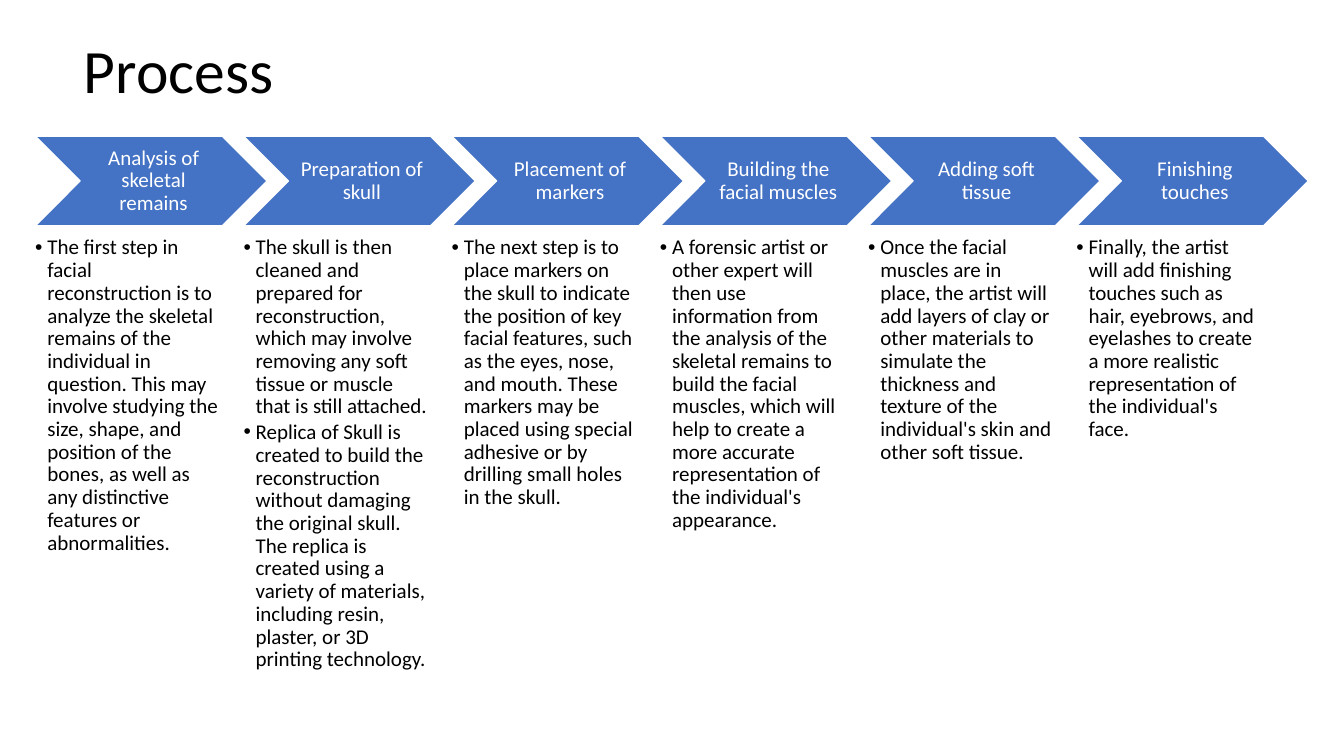
from lxml import etree
from pptx import Presentation
from pptx.dml.color import RGBColor
from pptx.enum import shapes, text
from pptx.oxml.ns import qn
from pptx.util import Pt

BLACK = RGBColor(0x00, 0x00, 0x00)
WHITE = RGBColor(0xFF, 0xFF, 0xFF)
BLUE = RGBColor(0x44, 0x72, 0xC4)

FIRST_LEFT, STEP_PITCH = 25.2, 148.75
CHEVRON_TOP, CHEVRON_WIDTH, CHEVRON_HEIGHT = 97.2, 165.6, 64.1
DETAIL_TOP, DETAIL_WIDTH, DETAIL_HEIGHT = 169.2, 132.5, 321.8
BULLET_INDENT = 8.64

STEPS = [
    ("Analysis of skeletal remains", [
        "The first step in facial reconstruction is to analyze the skeletal remains "
        "of the individual in question. This may involve studying the size, shape, "
        "and position of the bones, as well as any distinctive features or "
        "abnormalities."]),
    ("Preparation of skull", [
        "The skull is then cleaned and prepared for reconstruction, which may involve "
        "removing any soft tissue or muscle that is still attached.",
        "Replica of Skull is created to build the reconstruction without damaging the "
        "original skull. The replica is created using a variety of materials, "
        "including resin, plaster, or 3D printing technology."]),
    ("Placement of markers", [
        "The next step is to place markers on the skull to indicate the position of "
        "key facial features, such as the eyes, nose, and mouth. These markers may be "
        "placed using special adhesive or by drilling small holes in the skull."]),
    ("Building the facial muscles", [
        "A forensic artist or other expert will then use information from the "
        "analysis of the skeletal remains to build the facial muscles, which will "
        "help to create a more accurate representation of the individual's "
        "appearance."]),
    ("Adding soft tissue", [
        "Once the facial muscles are in place, the artist will add layers of clay or "
        "other materials to simulate the thickness and texture of the individual's "
        "skin and other soft tissue."]),
    ("Finishing touches", [
        "Finally, the artist will add finishing touches such as hair, eyebrows, and "
        "eyelashes to create a more realistic representation of the individual's "
        "face."]),
]


def write_paragraphs(frame, lines, size, color, margins, space_after=0):
    """Fill a wrapping text frame; margins run left, top, right, bottom."""
    frame.word_wrap = True
    (frame.margin_left, frame.margin_top,
     frame.margin_right, frame.margin_bottom) = map(Pt, margins)
    frame.text = "\n".join(lines)
    for paragraph in frame.paragraphs:
        paragraph.line_spacing = 0.9
        paragraph.space_after = Pt(space_after)
        for run in paragraph.runs:
            run.font.name = "Calibri"
            run.font.size = Pt(size)
            run.font.color.rgb = color


def add_bullet(paragraph):
    properties = paragraph._p.get_or_add_pPr()
    properties.set("marL", str(Pt(BULLET_INDENT)))
    properties.set("indent", str(-Pt(BULLET_INDENT)))
    etree.SubElement(properties, qn("a:buFont")).set("typeface", "Arial")
    etree.SubElement(properties, qn("a:buChar")).set("char", "•")


deck = Presentation()
deck.slide_width, deck.slide_height = Pt(960), Pt(540)
slide = deck.slides.add_slide(deck.slide_layouts[6])

title = slide.shapes.add_textbox(Pt(52.8), Pt(0), Pt(828), Pt(104.4)).text_frame
write_paragraphs(title, ["Process"], 44, BLACK, (7.2, 3.6, 7.2, 3.6))
title.vertical_anchor = text.MSO_ANCHOR.MIDDLE

for index, (step, details) in enumerate(STEPS):
    left = Pt(FIRST_LEFT + index * STEP_PITCH)

    chevron = slide.shapes.add_shape(
        shapes.MSO_SHAPE.CHEVRON, left, Pt(CHEVRON_TOP),
        Pt(CHEVRON_WIDTH), Pt(CHEVRON_HEIGHT))
    chevron.shadow.inherit = False
    chevron.fill.solid()
    chevron.fill.fore_color.rgb = BLUE
    chevron.line.color.rgb = WHITE
    chevron.line.width = Pt(1)
    write_paragraphs(chevron.text_frame, [step], 15, WHITE, (5, 1.5, 1.5, 1.5))
    chevron.text_frame.vertical_anchor = text.MSO_ANCHOR.MIDDLE
    chevron.text_frame.paragraphs[0].alignment = text.PP_ALIGN.CENTER

    explanation = slide.shapes.add_textbox(
        left, Pt(DETAIL_TOP), Pt(DETAIL_WIDTH), Pt(DETAIL_HEIGHT)).text_frame
    write_paragraphs(explanation, details, 15, BLACK, (0, 0, 0, 0), space_after=2.25)
    for paragraph in explanation.paragraphs:
        add_bullet(paragraph)

deck.save("out.pptx")
